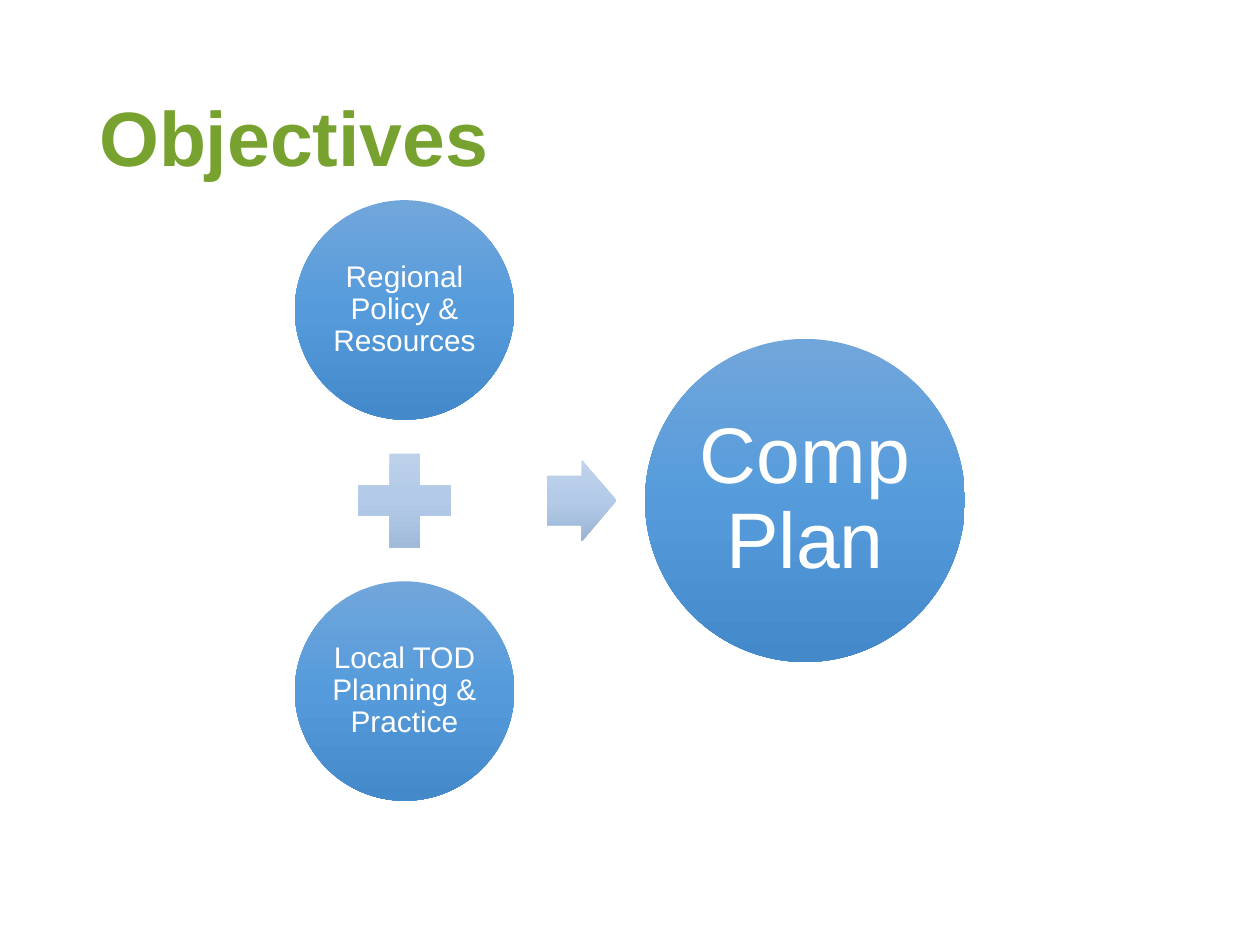
from copy import deepcopy
from dataclasses import dataclass

from pptx import Presentation
from pptx.dml.color import RGBColor as RGB
from pptx.enum.shapes import MSO_SHAPE as Shape
from pptx.enum.text import MSO_ANCHOR as Anchor, MSO_AUTO_SIZE as AutoSize, PP_ALIGN as Align
from pptx.util import Pt


@dataclass(frozen=True)
class Theme:
    font: str = "Arial"
    title_color: str = "78A22F"
    label_color: str = "FFFFFF"
    circle_fill: tuple = ("71A6DB", "559BDB", "448ACA")
    sign_fill: tuple = ("C0D2EB", "B3CBE9", "9BB4D3")
    title_size: int = 44
    input_size: int = 17
    result_size: int = 45
    line_spacing: float = 0.9


class SlideBuilder:
    def __init__(self, slide, theme):
        self.slide = slide
        self.theme = theme

    def _write(self, shape, text, size, color, align, bold=False):
        frame = shape.text_frame
        frame.text = text
        frame.word_wrap = True
        frame.auto_size = AutoSize.NONE
        frame.vertical_anchor = Anchor.MIDDLE
        paragraph = frame.paragraphs[0]
        paragraph.alignment = align
        paragraph.line_spacing = self.theme.line_spacing
        font = paragraph.font
        font.name, font.size, font.bold = self.theme.font, Pt(size), bold
        font.color.rgb = RGB.from_string(color)

    def _shade(self, shape, colors):
        """Fill from top to bottom with evenly spaced colour stops."""
        fill = shape.fill
        fill.gradient()
        fill.gradient_angle = 270
        # The default gradient has two stops; add one for the middle colour
        stop_list = shape._element.spPr.find(".//{*}gsLst")
        stop_list.insert(1, deepcopy(stop_list[0]))
        for i, (stop, color) in enumerate(zip(fill.gradient_stops, colors)):
            stop.position = i / (len(colors) - 1)
            stop.color.rgb = RGB.from_string(color)

    def title(self, text, left, top, width, height):
        title = self.slide.shapes.title
        title.left, title.top = Pt(left), Pt(top)
        title.width, title.height = Pt(width), Pt(height)
        self._write(title, text, self.theme.title_size, self.theme.title_color,
                    Align.LEFT, bold=True)

    def sign(self, kind, center_x, center_y, width, height, colors=None):
        shape = self.slide.shapes.add_shape(
            kind, Pt(center_x - width / 2), Pt(center_y - height / 2),
            Pt(width), Pt(height))
        shape.shadow.inherit = False
        shape.line.fill.background()
        self._shade(shape, colors or self.theme.sign_fill)
        return shape

    def circle(self, text, center_x, center_y, width, height, size, inset):
        circle = self.sign(Shape.OVAL, center_x, center_y, width, height,
                           self.theme.circle_fill)
        self._write(circle, text, size, self.theme.label_color, Align.CENTER)
        frame = circle.text_frame
        frame.margin_left = frame.margin_right = Pt(inset)
        frame.margin_top = frame.margin_bottom = Pt(inset)


def main():
    deck = Presentation()
    deck.slide_width, deck.slide_height = Pt(720), Pt(540)
    theme = Theme()
    builder = SlideBuilder(deck.slides.add_slide(deck.slide_layouts[5]), theme)

    builder.title("Objectives", 49.5, 28.75, 621, 104.4)

    # Inputs stacked above and below the plus sign
    inputs_x, middle_y, input_step = 231.2, 286, 108.9
    inputs = ("Regional Policy & Resources", "Local TOD Planning & Practice")
    for label, side in zip(inputs, (-1, 1)):
        builder.circle(label, inputs_x, middle_y + side * input_step,
                       125.4, 125.4, theme.input_size, 1.5)
    builder.sign(Shape.MATH_PLUS, inputs_x, middle_y, 72.7, 72.7)

    # Arrow to the result
    arrow = builder.sign(Shape.RIGHT_ARROW, 332.4, middle_y, 39.8, 46.8)
    arrow.adjustments[0] = 0.6
    builder.circle("Comp Plan", 460, middle_y, 182.8, 184.6,
                   theme.result_size, 4.3)

    deck.save("out.pptx")


if __name__ == "__main__":
    main()
